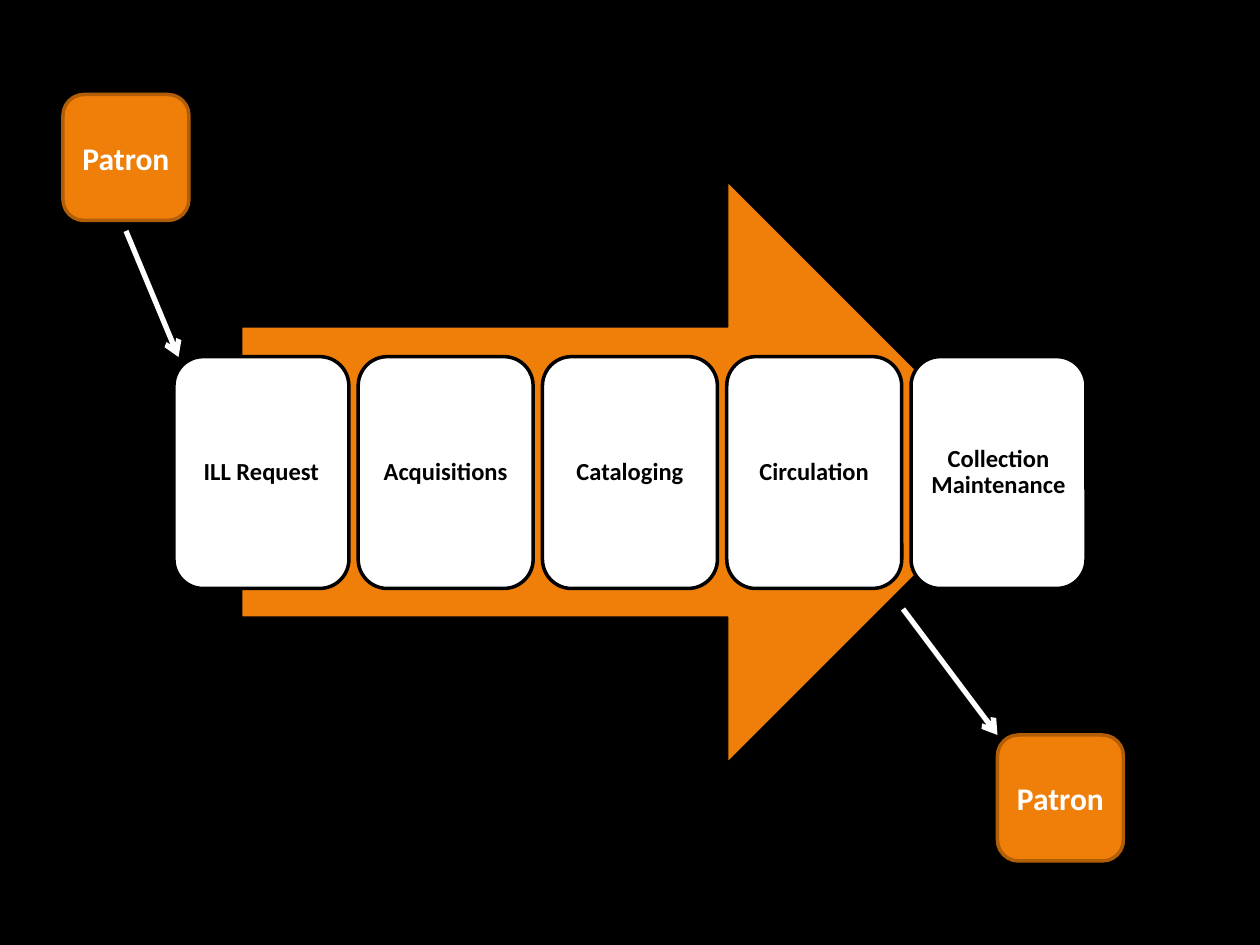
from lxml.etree import SubElement
from pptx import Presentation
from pptx.dml.color import RGBColor
from pptx.enum.shapes import MSO_CONNECTOR, MSO_SHAPE
from pptx.enum.text import MSO_ANCHOR, PP_ALIGN
from pptx.oxml.ns import qn
from pptx.util import Pt

COLORS = {
    "background": "000000",
    "orange": "F07F09",
    "dark_orange": "B25E07",
    "white": "FFFFFF",
    "black": "000000",
}
FONT = "Calibri"
STAGES = ["ILL Request", "Acquisitions", "Cataloging", "Circulation",
          "Collection Maintenance"]

# Stage cards, in points
CARD_LEFT, CARD_TOP = 99.4, 203.8
CARD_WIDTH, CARD_HEIGHT = 100, 132.5
CARD_STEP = 105.3
CARD_INSET = 4.3
PATRON_SIZE = 72


def color(name):
    return RGBColor.from_string(COLORS[name])


def add_block(page, kind, left, top, width, height, fill, line, line_width):
    """Add a filled and outlined preset shape."""
    block = page.shapes.add_shape(kind, Pt(left), Pt(top), Pt(width), Pt(height))
    block.shadow.inherit = False
    block.fill.solid()
    block.fill.fore_color.rgb = color(fill)
    block.line.color.rgb = color(line)
    block.line.width = Pt(line_width)
    return block


def add_label(block, text, size, text_color):
    """Write a bold, centred label into a shape."""
    frame = block.text_frame
    frame.text = text
    frame.word_wrap = True
    frame.vertical_anchor = MSO_ANCHOR.MIDDLE
    para = frame.paragraphs[0]
    para.alignment = PP_ALIGN.CENTER
    font = para.runs[0].font
    font.name, font.size, font.bold = FONT, Pt(size), True
    font.color.rgb = color(text_color)


def add_stage(page, index, text):
    card = add_block(page, MSO_SHAPE.ROUNDED_RECTANGLE,
                     CARD_LEFT + index * CARD_STEP, CARD_TOP,
                     CARD_WIDTH, CARD_HEIGHT, "white", "black", 2)
    add_label(card, text, 14, "black")
    frame = card.text_frame
    frame.margin_left = frame.margin_right = Pt(CARD_INSET)
    frame.margin_top = frame.margin_bottom = Pt(CARD_INSET)
    frame.paragraphs[0].line_spacing = 0.9


def add_patron(page, left, top):
    patron = add_block(page, MSO_SHAPE.ROUNDED_RECTANGLE, left, top,
                       PATRON_SIZE, PATRON_SIZE, "orange", "dark_orange", 2)
    add_label(patron, "Patron", 18, "white")


def add_arrow(page, start, end):
    """Add a straight white connector with an open arrowhead at its end."""
    arrow = page.shapes.add_connector(
        MSO_CONNECTOR.STRAIGHT, *(Pt(value) for value in (*start, *end)))
    arrow.line.color.rgb = color("white")
    arrow.line.width = Pt(3)
    SubElement(arrow.line._get_or_add_ln(), qn("a:tailEnd"), type="arrow")
    SubElement(arrow._element.spPr, qn("a:effectLst"))


def main():
    deck = Presentation()
    deck.slide_width, deck.slide_height = Pt(720), Pt(540)
    page = deck.slides.add_slide(deck.slide_layouts[6])
    page.background.fill.solid()
    page.background.fill.fore_color.rgb = color("background")

    # Large process arrow behind the stages
    add_block(page, MSO_SHAPE.RIGHT_ARROW, 138.2, 104, 443.5, 331.5,
              "orange", "black", 0.75)

    # Row of workflow stages
    for index, text in enumerate(STAGES):
        add_stage(page, index, text)

    # Patron at the start and at the end
    add_patron(page, 36, 54)
    add_arrow(page, (72, 132), (102, 204))
    add_patron(page, 570, 420)
    add_arrow(page, (516, 348), (570, 420))

    deck.save("out.pptx")


if __name__ == "__main__":
    main()
